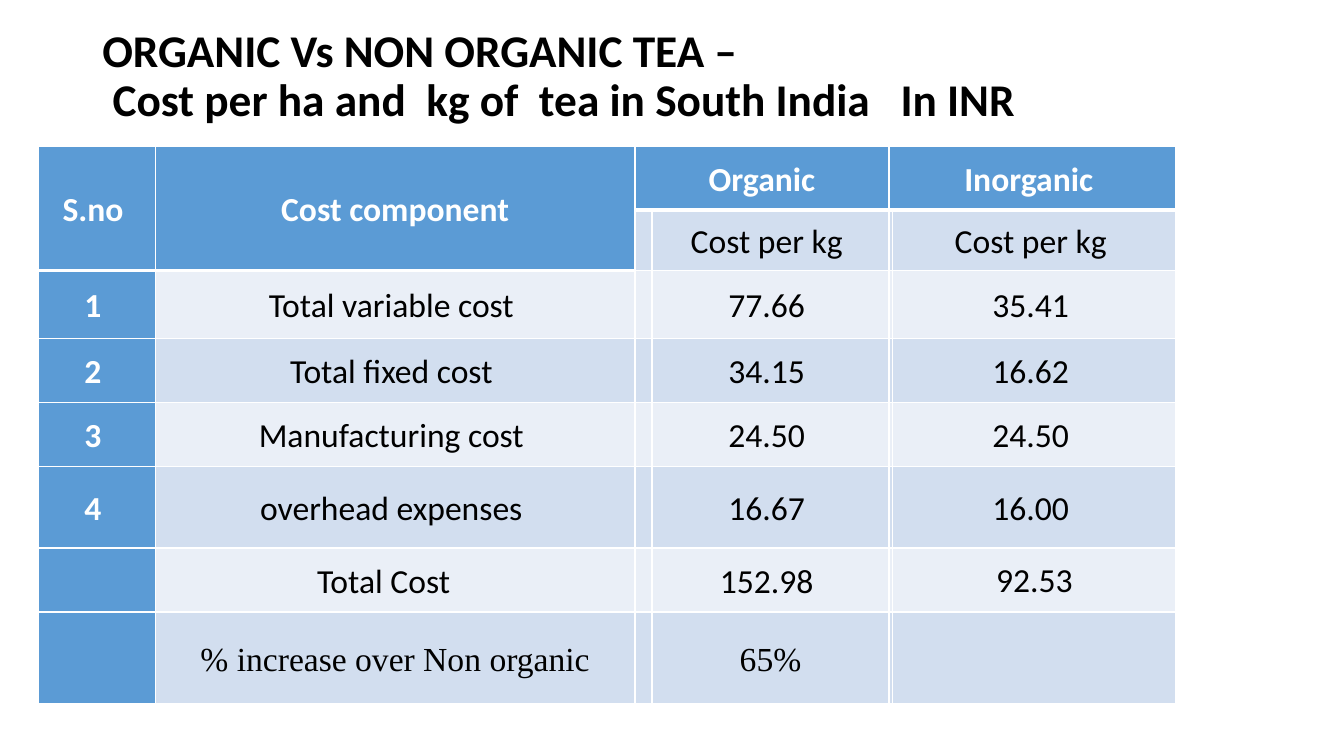
from lxml import etree
from pptx import Presentation
from pptx.dml.color import RGBColor
from pptx.enum.text import MSO_ANCHOR, PP_ALIGN
from pptx.oxml.ns import qn
from pptx.util import Pt

MID = MSO_ANCHOR.MIDDLE
LEFT, CENTER = PP_ALIGN.LEFT, PP_ALIGN.CENTER

WHITE, BLACK, BLUE = "FFFFFF", "000000", "5B9BD5"
BANDS = ["EAEFF7", "D2DEEF"]
SERIF = "Times New Roman"

TITLE = ("ORGANIC Vs NON ORGANIC TEA –\v"
         " Cost per ha and  kg of  tea in South India   In INR")
COLS = [83.5, 342.7, 12.2, 169.2, 2.2, 202.3]
ROWS = [45.7, 43.2, 48.6, 45.7, 45.7, 58.2, 45.7, 65.6]
# Columns 2 and 4 are narrow spacers
DATA = [
    ["S.no ", "Cost component", "Organic", "", "Inorganic ", ""],
    ["", "", "", "Cost per kg ", "", "Cost per kg "],
    ["1 ", "Total variable cost ", "", "77.66 ", "", "35.41 "],
    ["2 ", "Total fixed cost ", "", "34.15 ", "", "16.62 "],
    ["3 ", "Manufacturing cost ", "", "24.50 ", "", "24.50 "],
    ["4 ", "overhead expenses ", "", "16.67 ", "", "16.00 "],
    ["", "Total Cost ", "", "152.98 ", "", "92.53"],
    ["", "% increase over Non organic", "", "65%", "", ""],
]
MERGES = [(0, 0, 1, 0), (0, 1, 1, 1), (0, 2, 0, 3), (0, 4, 0, 5)]
HEADS = [(0, col) for col in range(6)] + [(1, 0), (1, 1)]
THICK = [(0, col) for col in range(2, 6)] + [(1, 0), (1, 1)]


def color(code):
    return RGBColor.from_string(code)


def write(frame, text, size=24, font="Calibri", ink=BLACK, bold=False,
          align=CENTER, line=1.07, gap=6):
    frame.word_wrap = True
    para = frame.paragraphs[0]
    para.text = text
    para.alignment = align
    para.line_spacing = line
    para.space_before = para.space_after = Pt(gap)
    for run in para.runs:
        run.font.size = Pt(size)
        run.font.name = font
        run.font.bold = bold
        run.font.color.rgb = color(ink)


def edge(cell, side, width):
    props = cell._tc.get_or_add_tcPr()
    line = etree.SubElement(props, qn("a:" + side), w=str(Pt(width)))
    fill = etree.SubElement(line, qn("a:solidFill"))
    etree.SubElement(fill, qn("a:srgbClr"), val=WHITE)


def style(cell, row, col):
    text = DATA[row][col]
    head = col == 0 or (row, col) in HEADS
    cell.vertical_anchor = MID
    side = 5 if col in (0, 1, 3) or (row, col) == (0, 2) else 0
    cell.margin_left = cell.margin_right = Pt(side)
    cell.margin_top, cell.margin_bottom = Pt(0.7 if side else 0), Pt(0)
    if text.startswith("Total Cost"):
        cell.margin_right = Pt(16)
    if text:
        write(cell.text_frame, text, ink=WHITE if head else BLACK, bold=head,
              font=SERIF if row == len(DATA) - 1 else "Calibri")
    # Borders come before the fill in the cell's properties
    for name in ("lnL", "lnR", "lnT", "lnB"):
        thick = name == "lnB" and (row, col) in THICK
        thick = thick or name == "lnT" and (row - 1, col) in THICK
        edge(cell, name, 3 if thick else 1)
    cell.fill.solid()
    cell.fill.fore_color.rgb = color(BLUE if head else BANDS[row % 2])


def add_title(slide, left, top, width, height):
    box = slide.shapes.add_textbox(Pt(left), Pt(top), Pt(width), Pt(height))
    box.text_frame.vertical_anchor = MID
    write(box.text_frame, TITLE, size=32.4, bold=True, align=LEFT,
          line=0.9, gap=0)


def add_costs(slide, left, top):
    grid = slide.shapes.add_table(
        len(ROWS), len(COLS), Pt(left), Pt(top),
        Pt(sum(COLS)), Pt(sum(ROWS))).table
    for col, width in zip(grid.columns, COLS):
        col.width = Pt(width)
    for row, height in zip(grid.rows, ROWS):
        row.height = Pt(height)
    for row in range(len(ROWS)):
        for col in range(len(COLS)):
            style(grid.cell(row, col), row, col)
    for top_row, first, low_row, last in MERGES:
        grid.cell(top_row, first).merge(grid.cell(low_row, last))


def main():
    deck = Presentation()
    deck.slide_width, deck.slide_height = Pt(960), Pt(540)
    slide = deck.slides.add_slide(deck.slide_layouts[6])
    add_title(slide, 66, 13, 828, 84)
    add_costs(slide, 27.4, 104.4)
    deck.save("out.pptx")


if __name__ == "__main__":
    main()
